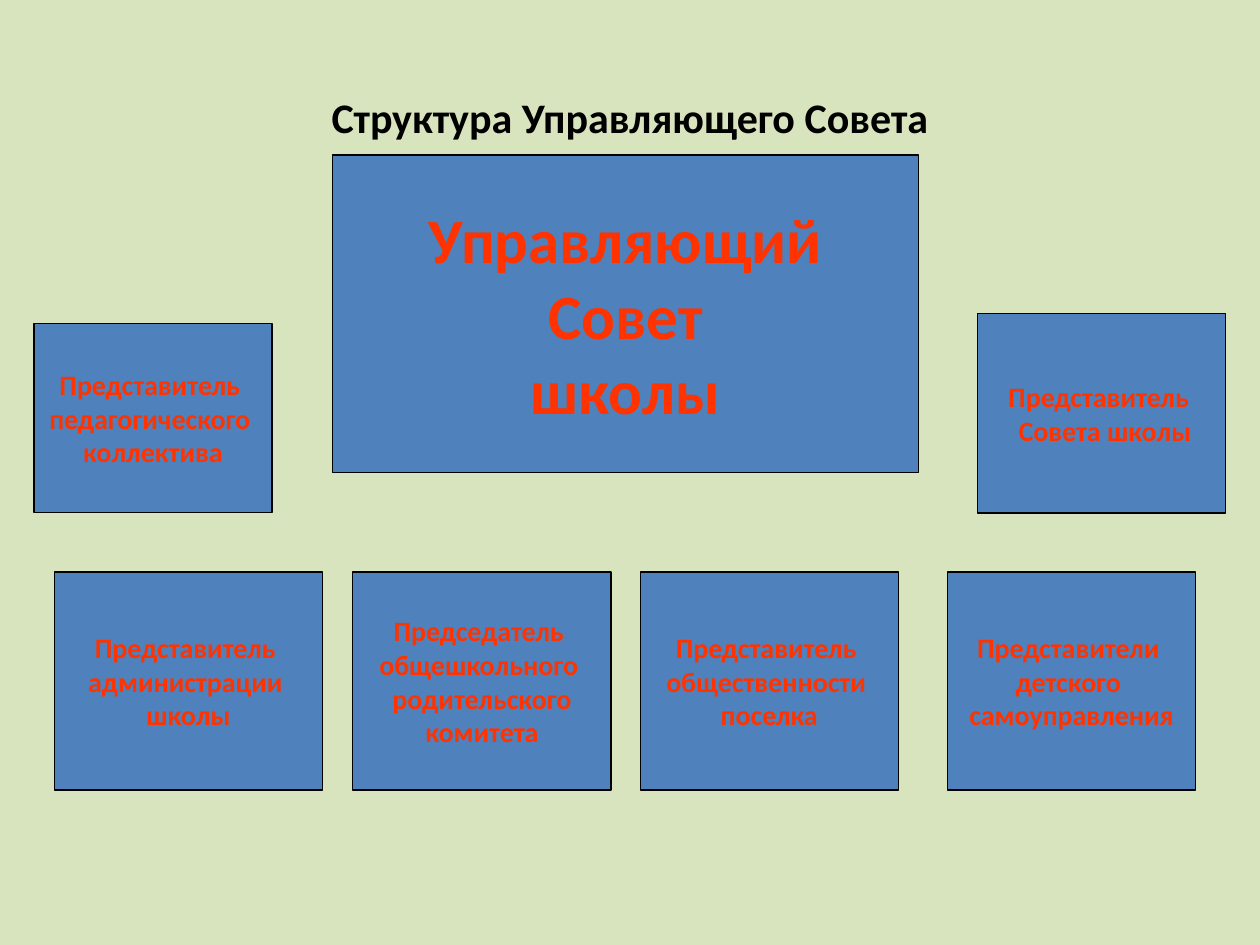
from pptx import Presentation
from pptx.dml.color import RGBColor
from pptx.enum import shapes, text
from pptx.util import Pt

BACKGROUND, BOX_FILL = "D7E4BD", "4F81BD"
BLACK, RED = "000000", "FF3300"

COUNCIL = (["Управляющий", " Совет ", "школы"], (190.1, 88.6, 334.8, 181.4))

SIDE_MEMBERS = [
    (["Представитель ", "педагогического ", "коллектива"], (19.4, 185, 136.1, 108)),
    (["Представитель ", " Совета школы"], (558.7, 179.3, 141.8, 113.8)),
]

ROW_TOP, ROW_HEIGHT = 326.9, 124.6
# Lines, left edge and width of each box in the bottom row
ROW_MEMBERS = [
    (["Представитель ", "администрации ", "школы"], 31, 153.4),
    (["Председатель ", "общешкольного ", "родительского", " комитета "], 201.6, 147.6),
    (["Представитель ", "общественности ", "поселка"], 365.8, 147.6),
    (["Представители ", "детского ", "самоуправления"], 541.4, 141.8),
]


def paint(color_format, hex_color):
    color_format.rgb = RGBColor.from_string(hex_color)


def write(frame, lines, size, color, wrap):
    """Fill a text frame with centred bold lines, one paragraph each."""
    frame.word_wrap = wrap
    frame.vertical_anchor = text.MSO_ANCHOR.MIDDLE
    for index, line in enumerate(lines):
        paragraph = frame.add_paragraph() if index else frame.paragraphs[0]
        paragraph.alignment = text.PP_ALIGN.CENTER
        run = paragraph.add_run()
        run.text = line
        run.font.name = "Calibri"
        run.font.size = Pt(size)
        run.font.bold = True
        paint(run.font.color, color)


def add_box(slide, lines, bounds, size=16):
    box = slide.shapes.add_shape(shapes.MSO_SHAPE.RECTANGLE, *map(Pt, bounds))
    box.shadow.inherit = False
    box.fill.solid()
    paint(box.fill.fore_color, BOX_FILL)
    paint(box.line.color, BLACK)
    box.line.width = Pt(0.75)
    write(box.text_frame, lines, size=size, color=RED, wrap=False)


def add_title(slide, heading):
    title = slide.shapes.title
    title.left, title.top, title.width, title.height = map(Pt, (36, 21.6, 648, 90))
    write(title.text_frame, [heading], size=24, color=BLACK, wrap=True)


def main():
    deck = Presentation()
    deck.slide_width, deck.slide_height = Pt(720), Pt(540)
    slide = deck.slides.add_slide(deck.slide_layouts[5])
    slide.background.fill.solid()
    paint(slide.background.fill.fore_color, BACKGROUND)

    add_title(slide, "Структура Управляющего Совета")
    add_box(slide, *COUNCIL, size=36)
    for lines, bounds in SIDE_MEMBERS:
        add_box(slide, lines, bounds)
    for lines, left, width in ROW_MEMBERS:
        add_box(slide, lines, (left, ROW_TOP, width, ROW_HEIGHT))
    deck.save("out.pptx")


if __name__ == "__main__":
    main()
